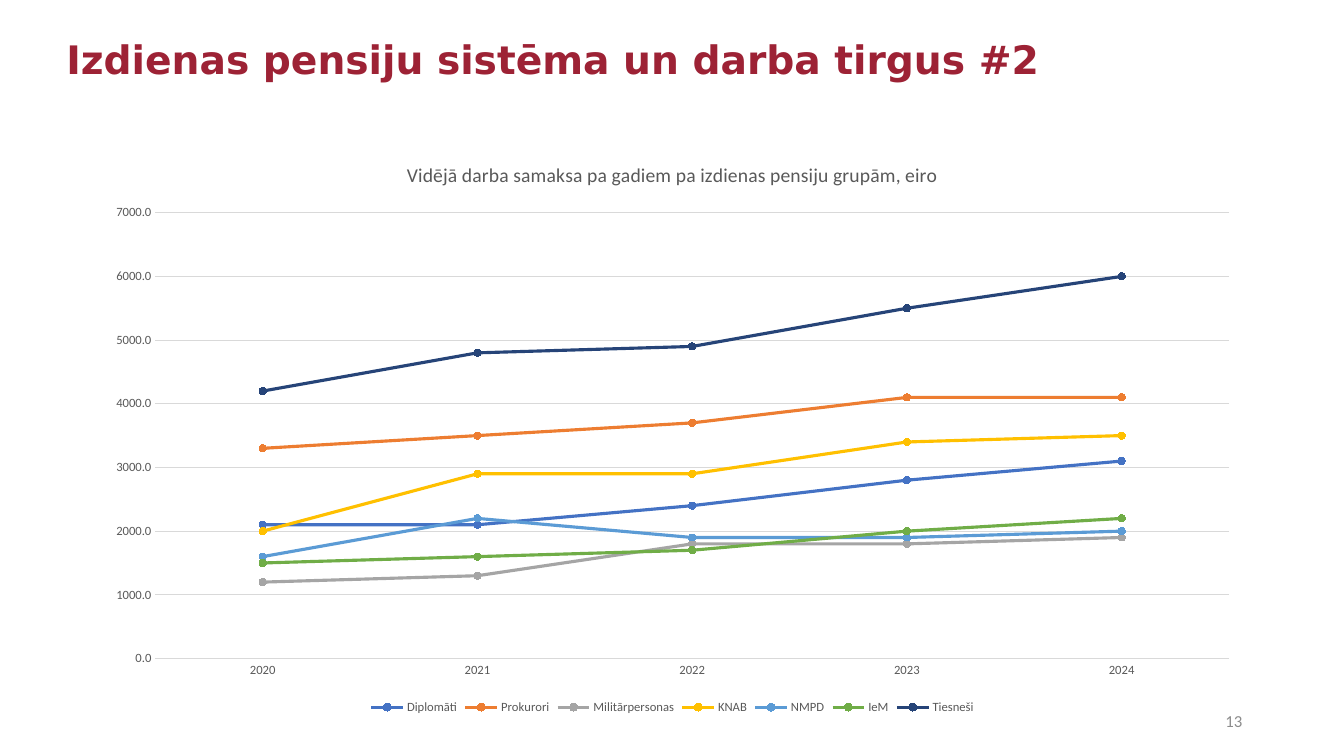
"""Build a slide with a line chart of average pay by service pension group."""
from pptx import Presentation, util as u
from pptx.chart.data import CategoryChartData
from pptx.dml.color import RGBColor
from pptx.enum import chart as ch, text
from pptx.oxml import parse_xml
from pptx.oxml.ns import nsdecls

TITLE = "Izdienas pensiju sistēma un darba tirgus #2"
PAGE_NUMBER = "13"
CHART_TITLE = "Vidējā darba samaksa pa gadiem pa izdienas pensiju grupām, eiro"
YEARS = ["2020", "2021", "2022", "2023", "2024"]
PAY = [
    ("Diplomāti", "4472C4", (2100, 2100, 2400, 2800, 3100)),
    ("Prokurori", "ED7D31", (3300, 3500, 3700, 4100, 4100)),
    ("Militārpersonas", "A5A5A5", (1200, 1300, 1800, 1800, 1900)),
    ("KNAB", "FFC000", (2000, 2900, 2900, 3400, 3500)),
    ("NMPD", "5B9BD5", (1600, 2200, 1900, 1900, 2000)),
    ("IeM", "70AD47", (1500, 1600, 1700, 2000, 2200)),
    ("Tiesneši", "264478", (4200, 4800, 4900, 5500, 6000)),
]
THEME = {
    "title": ("DejaVu Sans", 28, "9D2235", True),
    "number": ("Calibri", 12, "8C8C8C", False),
    "chart_title": ("Calibri", 14, "595959", False),
    "chart": ("Calibri", 9, "595959", False),
    "grid": "D9D9D9",
    "grid_width": 0.75,
    "series_width": 2.25,
    "marker": 5,
}
PLOT_AREA = {"x": 0.054, "y": 0.124, "w": 0.926, "h": 0.772}


def style_font(font, style):
    font.name, size, color, font.bold = THEME[style]
    font.size = u.Pt(size)
    font.color.rgb = RGBColor.from_string(color)


def style_line(line, color, width):
    line.color.rgb = RGBColor.from_string(color)
    line.width = u.Pt(width)


def add_text(page, content, place, style, align, spacing):
    box = page.shapes.add_textbox(*map(u.Inches, place))
    frame = box.text_frame
    frame.word_wrap = True
    frame.vertical_anchor = text.MSO_ANCHOR.MIDDLE
    para = frame.paragraphs[0]
    para.alignment = align
    para.line_spacing = spacing
    span = para.add_run()
    span.text = content
    style_font(span.font, style)


def place_plot(chart):
    plot_area = chart._chartSpace.chart.plotArea
    for old in plot_area.xpath("c:layout"):
        plot_area.remove(old)
    modes = "".join(f'<c:{side}Mode val="edge"/>' for side in "xy")
    sizes = "".join(f'<c:{key} val="{value}"/>' for key, value in PLOT_AREA.items())
    plot_area.insert(0, parse_xml(
        f'<c:layout {nsdecls("c")}><c:manualLayout><c:layoutTarget val="inner"/>'
        f'{modes}{sizes}</c:manualLayout></c:layout>'))


def add_pay_chart(page, place):
    data = CategoryChartData(number_format="0.0")
    data.categories = YEARS
    for name, _, values in PAY:
        data.add_series(name, values)
    chart = page.shapes.add_chart(
        ch.XL_CHART_TYPE.LINE_MARKERS, *map(u.Inches, place), data).chart
    style_font(chart.font, "chart")

    chart.has_title = True
    span = chart.chart_title.text_frame.paragraphs[0].add_run()
    span.text = CHART_TITLE
    style_font(span.font, "chart_title")
    chart.chart_title.include_in_layout = False

    chart.has_legend = True
    chart.legend.position = ch.XL_LEGEND_POSITION.BOTTOM
    chart.legend.include_in_layout = False
    style_font(chart.legend.font, "chart")

    years, euros = chart.category_axis, chart.value_axis
    for axis in (years, euros):
        axis.major_tick_mark = axis.minor_tick_mark = ch.XL_TICK_MARK.NONE
        style_font(axis.tick_labels.font, "chart")
    euros.minimum_scale, euros.maximum_scale, euros.major_unit = 0, 7000, 1000
    euros.tick_labels.number_format = "0.0"
    euros.tick_labels.number_format_is_linked = False
    euros.format.line.fill.background()
    for line in (years.format.line, euros.major_gridlines.format.line):
        style_line(line, THEME["grid"], THEME["grid_width"])

    chart.plots[0].vary_by_categories = False
    for series, (_, color, _) in zip(chart.plots[0].series, PAY):
        series.smooth = False
        style_line(series.format.line, color, THEME["series_width"])
        marker = series.marker
        marker.style = ch.XL_MARKER_STYLE.CIRCLE
        marker.size = THEME["marker"]
        marker.format.fill.solid()
        marker.format.fill.fore_color.rgb = RGBColor.from_string(color)
        style_line(marker.format.line, color, THEME["grid_width"])
    place_plot(chart)


def main():
    deck = Presentation()
    deck.slide_width, deck.slide_height = u.Inches(13.33), u.Inches(7.5)
    page = deck.slides.add_slide(deck.slide_layouts[6])
    add_text(page, PAGE_NUMBER, (9.42, 6.95, 3, 0.4), "number", text.PP_ALIGN.RIGHT, 1.0)
    add_text(page, TITLE, (0.56, 0.15, 11.5, 0.92), "title", text.PP_ALIGN.LEFT, 0.9)
    add_pay_chart(page, (0.92, 1.4, 11.5, 5.73))
    deck.save("out.pptx")


if __name__ == "__main__":
    main()
